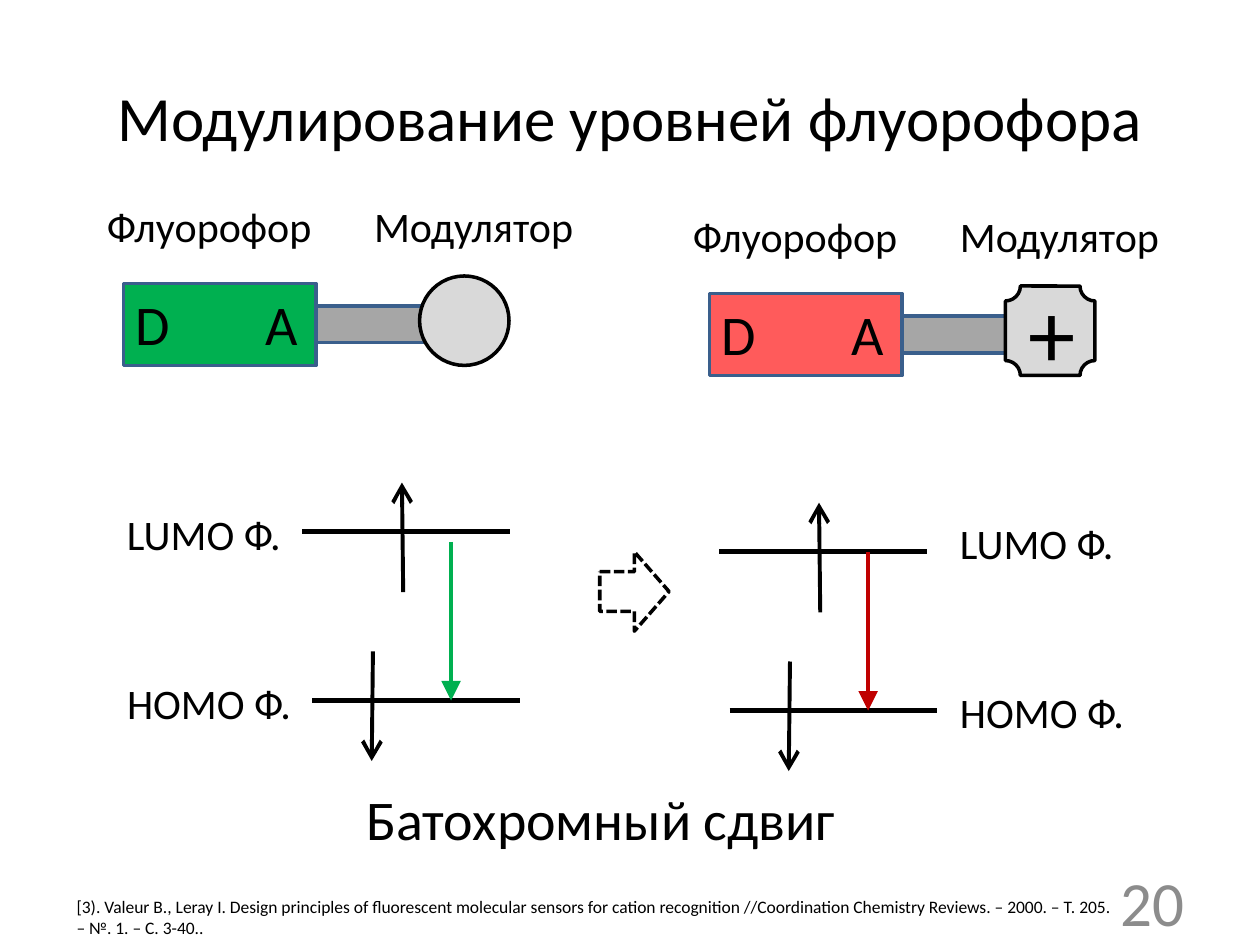
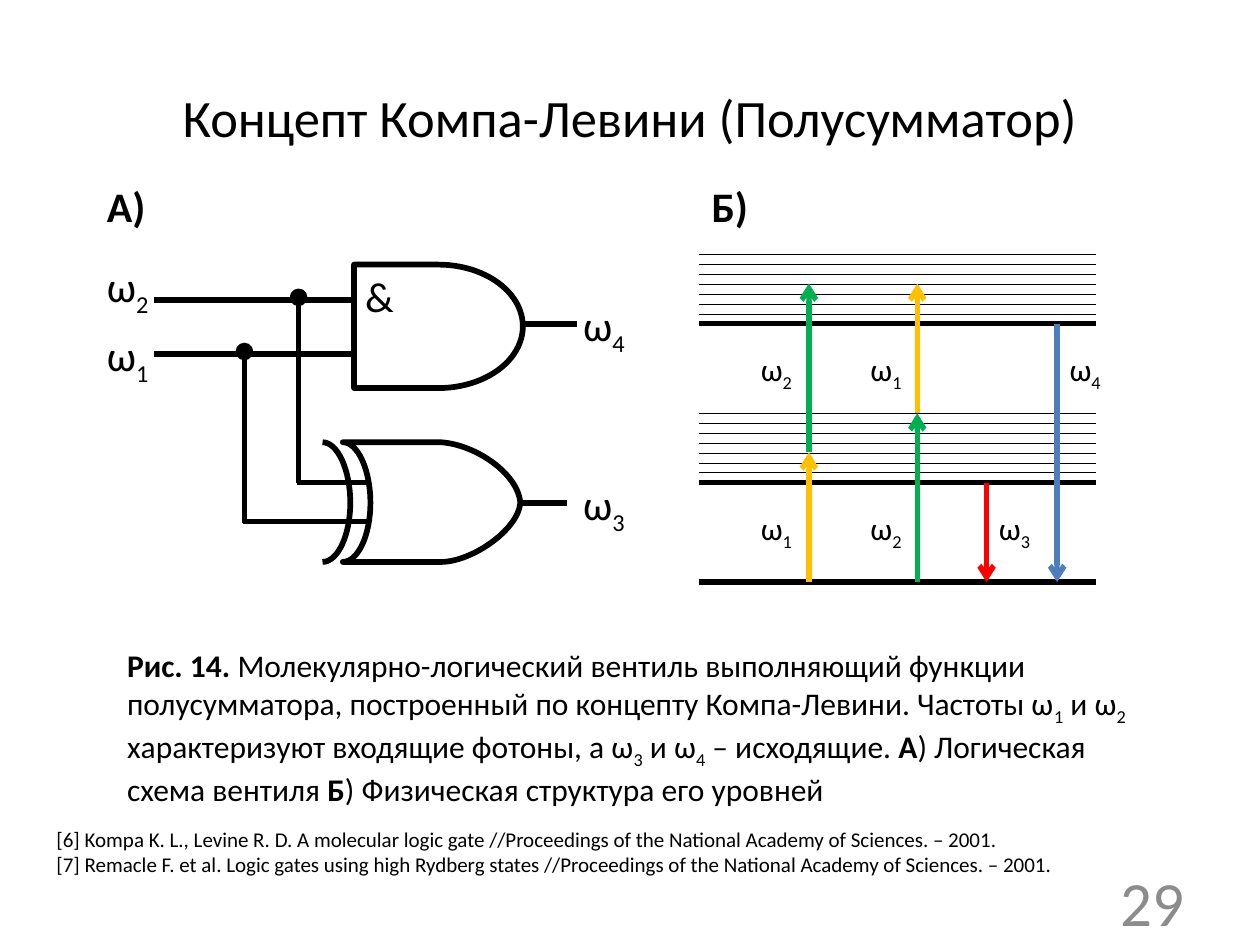
from pptx import Presentation
from pptx.dml.color import RGBColor
from pptx.enum.dml import MSO_LINE
from pptx.enum.shapes import MSO_CONNECTOR, MSO_SHAPE
from pptx.enum.text import MSO_ANCHOR, MSO_AUTO_SIZE, PP_ALIGN
from pptx.oxml.ns import qn
from pptx.util import Inches, Pt
from lxml.etree import SubElement

COLORS = {
    "black": "000000", "white": "FFFFFF", "number": "8C8C8C", "outline": "3A5F8C",
    "bridge": "A6A6A6", "modulator": "D9D9D9", "green": "00B050", "coral": "FF5B5B",
    "crimson": "C00000", "amber": "FFC000", "red": "FF0000", "blue": "4B7EBC",
}
FONT = "Calibri"
CENTERED = {"vertical_anchor": MSO_ANCHOR.MIDDLE, "word_wrap": True}
WRAPPED = {"word_wrap": True, "auto_size": MSO_AUTO_SIZE.SHAPE_TO_FIT_TEXT}
UNWRAPPED = {"word_wrap": False, "auto_size": MSO_AUTO_SIZE.SHAPE_TO_FIT_TEXT}
BOLD_MARK, SUBSCRIPT_MARK = "*", "~"

SHIFT_TITLE = "Модулирование уровней флуорофора"
SHIFT_NAME = "Батохромный сдвиг"
SHIFT_SOURCE = (
    "[3). Valeur B., Leray I. Design principles of fluorescent molecular sensors for cation "
    "recognition //Coordination Chemistry Reviews. – 2000. – Т. 205. – №. 1. – С. 3-40.."
)
STATES = [
    {"molecule": (0.98, 2.25), "body": "green", "modulator": MSO_SHAPE.OVAL, "sign": "",
     "lumo": (2.4, 4.22), "homo_y": 5.56, "photon": "green", "photon_gap": 0.08,
     "labels": (0.91, 3.99)},
    {"molecule": (5.63, 2.33), "body": "coral", "modulator": MSO_SHAPE.PLAQUE, "sign": "+",
     "lumo": (5.71, 4.38), "homo_y": 5.64, "photon": "crimson", "photon_gap": 0,
     "labels": (7.52, 4.06)},
]
MOLECULE_TEXTS = [
    ("Флуорофор", -0.23, -0.71, 1.84, 0.5, 24),
    ("Модулятор", 1.89, -0.71, 1.79, 0.5, 24),
    ("A", 1.03, 0, 0.46, 0.64, 32),
    ("D", 0, 0, 0.48, 0.64, 32),
]

GATE_TITLE = "Концепт Компа-Левини (Полусумматор)"
PANELS = [("*А)*", 0.75), ("*Б)*", 5.55)]
GATE_SIGNALS = [(2, 0.75, 2.02), (1, 0.75, 2.57), (3, 4.53, 3.75), (4, 4.53, 2.33)]
GATE_OUTPUTS = [((4.06, 3.99), (4.5, 3.99)), ((4.13, 2.57), (4.58, 2.57))]
INPUT_WIRES = [
    ((1.22, 2.81), (2.8, 2.81)), ((1.22, 2.38), (2.8, 2.38)),
    ((2.37, 2.38), (2.37, 3.83)), ((1.94, 2.81), (1.94, 4.15)),
    ((1.93, 4.14), (2.94, 4.14)),
]
CROSSING_WIRE = ((2.36, 3.83), (2.91, 3.83))
JUNCTIONS = [(2.37, 2.36), (1.94, 2.79)]
XOR_TOP, XOR_MIDDLE, XOR_BOTTOM = 3.51, 3.99, 4.46
XOR_NOSE = [
    [(3.5, XOR_BOTTOM)],
    [(3.74, XOR_BOTTOM), (4.11, 4.21), (4.13, XOR_MIDDLE)],
    [(4.11, 3.76), (3.78, 3.53), (3.5, XOR_TOP)],
]

LEVELS_X = (5.55, 8.7)
GROUND, FIRST, SECOND = 4.62, 3.83, 2.57
SUBLEVELS, BAND_HEIGHT = 7, 0.55
TRANSITIONS = [
    (6.42, GROUND, 3.59, "amber"), (7.28, GROUND, 3.28, "green"),
    (6.42, 3.59, 2.25, "green"), (7.28, 3.28, 2.25, "amber"),
    (8.39, SECOND, GROUND, "blue"), (7.83, FIRST, GROUND, "red"),
]
LOWER_LABELS = [(1, 5.94), (2, 6.81), (3, 7.83)]
UPPER_LABELS = [(2, 5.94), (1, 6.81), (4, 8.39)]
CAPTION = (
    "*Рис. 14. *Молекулярно-логический вентиль выполняющий функции полусумматора, "
    "построенный по концепту Компа-Левини. Частоты ω~1~ и ω~2 ~ характеризуют входящие "
    "фотоны, а ω~3~ и ω~4~ – исходящие. *А*) Логическая схема вентиля *Б*) Физическая "
    "структура его уровней"
)
GATE_SOURCES = [
    "[6] Kompa K. L., Levine R. D. A molecular logic gate //Proceedings of the National "
    "Academy of Sciences. – 2001.",
    "[7] Remacle F. et al. Logic gates using high Rydberg states //Proceedings of the "
    "National Academy of Sciences. – 2001.",
]


def color(name):
    return RGBColor.from_string(COLORS[name])


def apply(target, values):
    for name, value in values.items():
        setattr(target, name, value)


def write(shape, lines, size, frame, align=PP_ALIGN.LEFT, ink="black"):
    text_frame = shape.text_frame
    apply(text_frame, frame)
    for index, line in enumerate(lines):
        paragraph = text_frame.add_paragraph() if index else text_frame.paragraphs[0]
        paragraph.alignment = align
        for bold, chunk in enumerate(line.split(BOLD_MARK)):
            for lowered, part in enumerate(chunk.split(SUBSCRIPT_MARK)):
                if not part:
                    continue
                run = paragraph.add_run()
                run.text = part
                apply(run.font, {"name": FONT, "size": Pt(size), "bold": bold % 2 == 1})
                run.font.color.rgb = color(ink)
                if lowered % 2:
                    run._r.get_or_add_rPr().set("baseline", "-25000")


def add_text(slide, box, lines, size, frame=UNWRAPPED, align=PP_ALIGN.LEFT, ink="black"):
    shape = slide.shapes.add_textbox(*map(Inches, box))
    write(shape, lines, size, frame, align, ink)


def paint(shape, fill, line, width):
    shape.shadow.inherit = False
    if fill:
        shape.fill.solid()
        shape.fill.fore_color.rgb = color(fill)
    else:
        shape.fill.background()
    if line:
        shape.line.color.rgb = color(line)
        shape.line.width = Pt(width)
    else:
        shape.line.fill.background()
    return shape


def add_figure(slide, kind, box, fill, line="black", width=2):
    return paint(slide.shapes.add_shape(kind, *map(Inches, box)), fill, line, width)


def add_line(slide, start, end, width, ink="black", arrow=None, head="med"):
    points = map(Inches, (*start, *end))
    connector = slide.shapes.add_connector(MSO_CONNECTOR.STRAIGHT, *points)
    connector.line.color.rgb = color(ink)
    connector.line.width = Pt(width)
    properties = connector._element.spPr
    SubElement(properties, qn("a:effectLst"))
    if arrow:
        SubElement(properties.find(qn("a:ln")), qn("a:tailEnd"), type=arrow, w=head, len=head)


def back_arc(left):
    right = left + 0.22
    return [
        [(left + 0.12, XOR_TOP), (right, 3.73), (right, XOR_MIDDLE)],
        [(right, 4.25), (left + 0.12, XOR_BOTTOM), (left, XOR_BOTTOM)],
    ]


def add_outline(slide, start, segments, closed, fill):
    builder = slide.shapes.build_freeform(*map(Inches, start), scale=1.0)
    corners = [tuple(map(Inches, point)) for segment in segments for point in segment]
    builder.add_line_segments(corners, close=closed)
    shape = paint(builder.convert_to_shape(), fill, "black", 3.25)
    steps = iter(list(shape._element.iter(qn("a:lnTo"))))
    for segment in segments:
        first, *others = [next(steps) for _ in segment]
        if others:
            first.tag = qn("a:cubicBezTo")
            for step in others:
                first.append(step[0])
                step.getparent().remove(step)


def start_slide(presentation, title, title_size, number):
    slide = presentation.slides.add_slide(presentation.slide_layouts[6])
    add_text(slide, (0.5, 0.3, 9, 1.25), [title], title_size, CENTERED, PP_ALIGN.CENTER)
    add_text(slide, (7.17, 6.95, 2.33, 0.4), [str(number)], 36, CENTERED,
             PP_ALIGN.RIGHT, "number")
    return slide


def draw_molecule(slide, state):
    x, y = state["molecule"]
    add_figure(slide, MSO_SHAPE.RECTANGLE, (x + 1.3, y + 0.18, 1.24, 0.29), "bridge", "outline")
    add_figure(slide, MSO_SHAPE.RECTANGLE, (x, y, 1.53, 0.65), state["body"], "outline")
    modulator = add_figure(slide, state["modulator"], (x + 2.35, y - 0.06, 0.71, 0.71),
                           "modulator")
    if state["sign"]:
        write(modulator, [state["sign"]], 54, CENTERED, PP_ALIGN.CENTER)
    for text, dx, dy, width, height, size in MOLECULE_TEXTS:
        add_text(slide, (x + dx, y + dy, width, height), [text], size)


def draw_levels(slide, state):
    x, lumo_y = state["lumo"]
    homo_y = state["homo_y"]
    for left, y in ((x, lumo_y), (x + 0.08, homo_y)):
        add_line(slide, (left, y), (left + 1.65, y), 3)
    for left, start, end in ((x + 0.8, lumo_y + 0.48, lumo_y - 0.39),
                             (x + 0.56, homo_y - 0.39, homo_y + 0.48)):
        add_line(slide, (left, start), (left - 0.01, end), 2.25, "black", "arrow", "lg")
    add_line(slide, (x + 1.18, lumo_y + state["photon_gap"]), (x + 1.18, homo_y), 2.25,
             state["photon"], "triangle", "lg")
    left, top = state["labels"]
    add_text(slide, (left, top, 1.43, 0.5), ["LUMO Ф."], 24)
    add_text(slide, (left, top + 1.34, 1.51, 0.5), ["HOMO Ф."], 24)


def build_shift_slide(presentation):
    slide = start_slide(presentation, SHIFT_TITLE, 36, 20)
    for state in STATES:
        draw_molecule(slide, state)
        draw_levels(slide, state)
    arrow = add_figure(slide, MSO_SHAPE.RIGHT_ARROW, (4.76, 4.38, 0.55, 0.63), None)
    arrow.line.dash_style = MSO_LINE.SQUARE_DOT
    add_text(slide, (0.27, 5.87, 9, 1.25), [SHIFT_NAME], 32, CENTERED, PP_ALIGN.CENTER)
    add_text(slide, (0.51, 7.06, 8.43, 0.44), [SHIFT_SOURCE], 10, WRAPPED)


def draw_circuit(slide):
    for start, end in GATE_OUTPUTS:
        add_line(slide, start, end, 3.25)
    add_figure(slide, MSO_SHAPE.FLOWCHART_DELAY, (2.81, 2.1, 1.34, 0.98), "white", width=3.25)
    add_text(slide, (2.8, 2.1, 0.43, 0.5), ["&"], 24)
    for start, end in INPUT_WIRES:
        add_line(slide, start, end, 3.25)
    for x, y in JUNCTIONS:
        add_figure(slide, MSO_SHAPE.OVAL, (x - 0.07, y - 0.07, 0.14, 0.14), "black", None)
    add_outline(slide, (2.72, XOR_TOP), back_arc(2.72) + XOR_NOSE, True, "white")
    add_outline(slide, (2.56, XOR_TOP), back_arc(2.56), False, None)
    add_line(slide, *CROSSING_WIRE, 3.25)
    for index, x, y in GATE_SIGNALS:
        add_text(slide, (x, y, 0.55, 0.5), [f"ω~{index}~"], 24)


def draw_energy_diagram(slide):
    left, right = LEVELS_X
    for y in (GROUND, FIRST, SECOND):
        add_line(slide, (left, y), (right, y), 3)
    for base in (FIRST, SECOND):
        for step in range(1, SUBLEVELS + 1):
            y = base - step * BAND_HEIGHT / SUBLEVELS
            add_line(slide, (left, y), (right, y), 0.25)
    for x, start, end, ink in TRANSITIONS:
        add_line(slide, (x, start), (x, end), 3, ink, "arrow")
    for y, labels in ((3.99, LOWER_LABELS), (2.73, UPPER_LABELS)):
        for index, x in labels:
            add_text(slide, (x, y, 0.46, 0.4), [f"ω~{index}~"], 18)


def build_gate_slide(presentation):
    slide = start_slide(presentation, GATE_TITLE, 30, 29)
    draw_circuit(slide)
    draw_energy_diagram(slide)
    for text, x in PANELS:
        add_text(slide, (x, 1.38, 0.53, 0.5), [text], 24)
    add_text(slide, (0.91, 5.08, 8.19, 1.31), [CAPTION], 18, WRAPPED)
    add_text(slide, (0.35, 6.51, 8.27, 0.5), GATE_SOURCES, 12, WRAPPED)


def main():
    presentation = Presentation()
    apply(presentation, {"slide_width": Inches(10), "slide_height": Inches(7.5)})
    build_shift_slide(presentation)
    build_gate_slide(presentation)
    presentation.save("out.pptx")


if __name__ == "__main__":
    main()
